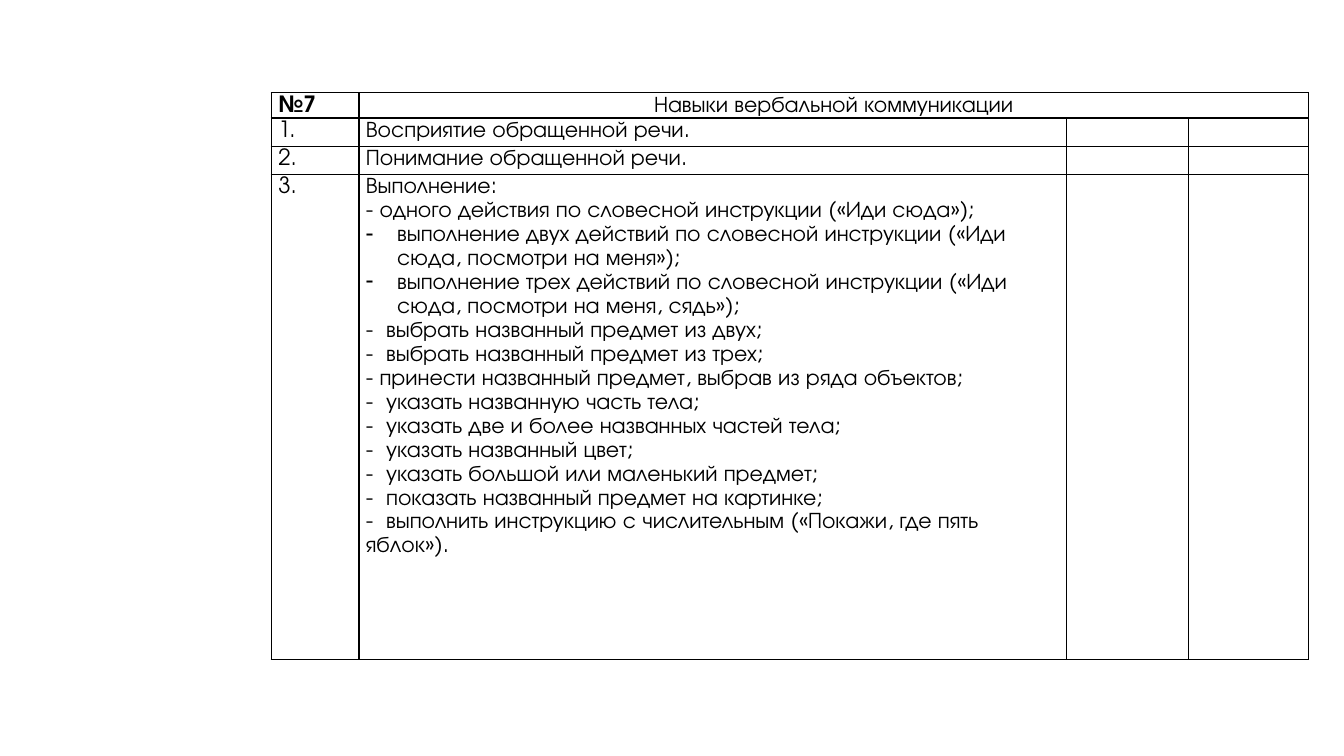
from lxml.etree import SubElement
from pptx import Presentation
from pptx.dml.color import RGBColor
from pptx.enum.text import PP_ALIGN
from pptx.oxml.ns import qn
from pptx.util import Inches, Pt

COLORS = {"ink": "000000"}
FONT = "TeX Gyre Adventor"
COLUMN_WIDTHS = [0.87, 7.02, 1.21, 1.19]
ROW_HEIGHTS = [0.25, 0.28, 0.28, 4.81]
HANGING = 0.31
DASH_TAB = 0.2

SKILLS = [
    ["№7", "Навыки вербальной коммуникации"],
    ["1.", "Восприятие обращенной речи."],
    ["2.", "Понимание обращенной речи."],
    ["3."],
]
INSTRUCTIONS = [
    ("plain", "Выполнение:"),
    ("plain", "- одного действия по словесной инструкции («Иди сюда»);"),
    ("bullet", "выполнение двух действий по словесной инструкции («Иди сюда, посмотри на меня»);"),
    ("bullet", "выполнение трех действий по словесной инструкции («Иди сюда, посмотри на меня, сядь»);"),
    ("tab", "выбрать названный предмет из двух;"),
    ("tab", "выбрать названный предмет из трех;"),
    ("plain", "- принести названный предмет, выбрав из ряда объектов;"),
    ("tab", "указать названную часть тела;"),
    ("tab", "указать две и более названных частей тела;"),
    ("tab", "указать названный цвет;"),
    ("tab", "указать большой или маленький предмет;"),
    ("tab", "показать названный предмет на картинке;"),
    ("tab", "выполнить инструкцию с числительным («Покажи, где пять яблок»)."),
]


def write(paragraph, text, align, bold=False):
    paragraph.text = text
    paragraph.alignment = align
    paragraph.line_spacing = 1.15
    paragraph.font.name = FONT
    paragraph.font.size = Pt(16)
    paragraph.font.bold = bold
    paragraph.font.color.rgb = RGBColor.from_string(COLORS["ink"])


def frame(cell):
    properties = cell._tc.get_or_add_tcPr()
    for side in ("lnL", "lnR", "lnT", "lnB"):
        line = SubElement(properties, qn(f"a:{side}"), w=str(Pt(1)))
        fill = SubElement(line, qn("a:solidFill"))
        SubElement(fill, qn("a:srgbClr"), val=COLORS["ink"])
    cell.fill.background()
    cell.margin_left = cell.margin_right = Inches(0.07)
    cell.margin_top = cell.margin_bottom = 0


prs = Presentation()
prs.slide_width, prs.slide_height = Inches(13.33), Inches(7.5)
slide = prs.slides.add_slide(prs.slide_layouts[6])

checklist = slide.shapes.add_table(
    len(ROW_HEIGHTS), len(COLUMN_WIDTHS), Inches(2.69), Inches(0.92),
    Inches(sum(COLUMN_WIDTHS)), Inches(sum(ROW_HEIGHTS)),
).table
checklist.first_row = checklist.horz_banding = False
for column, width in zip(checklist.columns, COLUMN_WIDTHS):
    column.width = Inches(width)
for row, height in zip(checklist.rows, ROW_HEIGHTS):
    row.height = Inches(height)
    for cell in row.cells:
        frame(cell)
        cell.text_frame.paragraphs[0].font.size = Pt(16)
checklist.cell(0, 1).merge(checklist.cell(0, 3))

for r, texts in enumerate(SKILLS):
    for c, text in enumerate(texts):
        heading = (r, c) == (0, 1)
        write(checklist.cell(r, c).text_frame.paragraphs[0], text,
              PP_ALIGN.CENTER if heading else PP_ALIGN.JUSTIFY, bold=(r, c) == (0, 0))

instructions = checklist.cell(3, 1).text_frame
for i, (style, text) in enumerate(INSTRUCTIONS):
    paragraph = instructions.add_paragraph() if i else instructions.paragraphs[0]
    properties = paragraph._p.get_or_add_pPr()
    if style == "bullet":
        properties.set("marL", str(Inches(HANGING)))
        properties.set("indent", str(-Inches(HANGING)))
        SubElement(properties, qn("a:buChar"), char="-")
    elif style == "tab":
        stops = SubElement(properties, qn("a:tabLst"))
        SubElement(stops, qn("a:tab"), pos=str(Inches(DASH_TAB)), algn="l")
        text = "-\t" + text
    write(paragraph, text, PP_ALIGN.LEFT)

prs.save("out.pptx")
